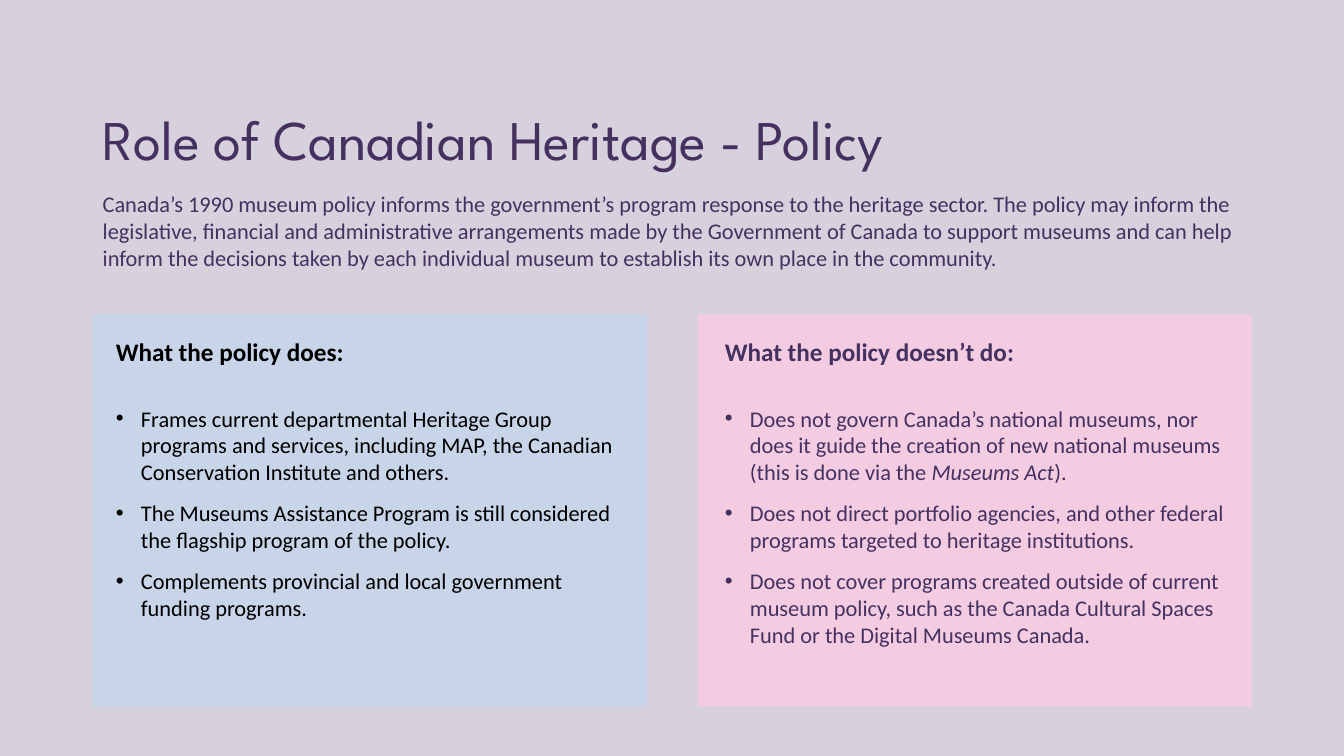
from dataclasses import dataclass

from lxml import etree
from pptx import Presentation
from pptx.dml.color import RGBColor
from pptx.enum.shapes import MSO_SHAPE
from pptx.enum.text import MSO_ANCHOR
from pptx.oxml.ns import qn
from pptx.util import Pt

RECTANGLE = MSO_SHAPE.RECTANGLE
TOP, MIDDLE = MSO_ANCHOR.TOP, MSO_ANCHOR.MIDDLE
EMU_PER_PX = 9144


@dataclass(frozen=True)
class Theme:
    """Colours, fonts and type sizes of the slide."""
    background: str = "D7D1DD"
    purple: str = "443160"
    black: str = "000000"
    blue_panel: str = "C8D4E8"
    pink_panel: str = "F3CCE2"
    title_font: str = "League Spartan"
    body_font: str = "Calibri"
    title_size: int = 40
    heading_size: int = 18
    body_size: int = 16


def px(length):
    """Turn whole pixels into EMU."""
    return length * EMU_PER_PX


def write(paragraph, *parts, font, size, color, bold=False, italic_part=None,
          before=0, spacing=1.0, bullet_indent=0):
    """Write the parts into a paragraph as runs of one format."""
    if bullet_indent:
        properties = paragraph._p.get_or_add_pPr()
        properties.set("marL", str(px(bullet_indent)))
        properties.set("indent", str(-px(bullet_indent)))
        etree.SubElement(properties, qn("a:buFont")).set("typeface", "Arial")
        etree.SubElement(properties, qn("a:buChar")).set("char", "•")
    paragraph.space_before = Pt(before)
    paragraph.line_spacing = spacing
    for part in parts:
        run = paragraph.add_run()
        run.text = part
        run.font.name = font
        run.font.size = Pt(size)
        run.font.bold = bold
        run.font.italic = part == italic_part
        run.font.color.rgb = RGBColor.from_string(color)


class PolicySlide:
    """Holds the theme and the slide, and adds each kind of element."""

    def __init__(self, slide, theme):
        """Keep the slide and paint its background."""
        self.slide = slide
        self.theme = theme
        fill = slide.background.fill
        fill.solid()
        fill.fore_color.rgb = RGBColor.from_string(theme.background)

    def frame(self, left, top, width, height, anchor=TOP):
        """Add a wrapping text box and return its text frame."""
        box = self.slide.shapes.add_textbox(*map(px, (left, top, width, height)))
        box.text_frame.word_wrap = True
        box.text_frame.vertical_anchor = anchor
        return box.text_frame

    def title(self, text):
        """Add the slide title."""
        frame = self.frame(92, 116, 1194, 50, MIDDLE)
        write(frame.paragraphs[0], text, font=self.theme.title_font,
              size=self.theme.title_size, color=self.theme.purple, spacing=0.9)

    def introduction(self, text):
        """Add the paragraph below the title."""
        frame = self.frame(92, 184, 1150, 103)
        write(frame.paragraphs[0], text, font=self.theme.body_font,
              size=self.theme.body_size, color=self.theme.purple)

    def panel(self, left, fill):
        """Add a plain coloured panel."""
        panel = self.slide.shapes.add_shape(
            RECTANGLE, *map(px, (left, 312, 550, 389)))
        panel.shadow.inherit = False
        panel.fill.solid()
        panel.fill.fore_color.rgb = RGBColor.from_string(fill)
        panel.line.fill.background()

    def points(self, left, color, heading, bullets, italic_part=None):
        """Add a bold heading with its bulleted points."""
        frame = self.frame(left, 329, 516, 344)
        write(frame.paragraphs[0], heading, font=self.theme.body_font,
              size=self.theme.heading_size, color=color, bold=True)
        for index, parts in enumerate(bullets):
            write(frame.add_paragraph(), *parts, font=self.theme.body_font,
                  size=self.theme.body_size, color=color, bullet_indent=25,
                  italic_part=italic_part, before=10 if index else 27)


def main():
    """Build and save the slide."""
    theme = Theme()
    presentation = Presentation()
    presentation.slide_width, presentation.slide_height = px(1333), px(750)
    blank = presentation.slide_layouts[6]
    policy = PolicySlide(presentation.slides.add_slide(blank), theme)

    policy.title("Role of Canadian Heritage - Policy")
    policy.introduction(
        "Canada’s 1990 museum policy informs the government’s program response "
        "to the heritage sector. The policy may inform the legislative, "
        "financial and administrative arrangements made by the Government of "
        "Canada to support museums and can help inform the decisions taken by "
        "each individual museum to establish its own place in the community.")

    policy.panel(92, theme.blue_panel)
    policy.points(105, theme.black, "What the policy does:", [
        ("Frames current departmental Heritage Group programs and services, "
         "including MAP, the Canadian Conservation Institute and others.",),
        ("The Museums Assistance Program is still considered the flagship "
         "program of the policy.",),
        ("Complements provincial and local government funding programs.",),
    ])

    policy.panel(692, theme.pink_panel)
    policy.points(709, theme.purple, "What the policy doesn’t do:", [
        ("Does not govern Canada’s national museums, nor does it guide the "
         "creation of new national museums (this is done via the ",
         "Museums Act", ")."),
        ("Does not direct portfolio agencies, and other federal programs "
         "targeted to heritage institutions.",),
        ("Does not cover programs created outside of current museum policy, "
         "such as the Canada Cultural Spaces Fund or the Digital Museums "
         "Canada.",),
    ], italic_part="Museums Act")

    presentation.save("out.pptx")


if __name__ == "__main__":
    main()
